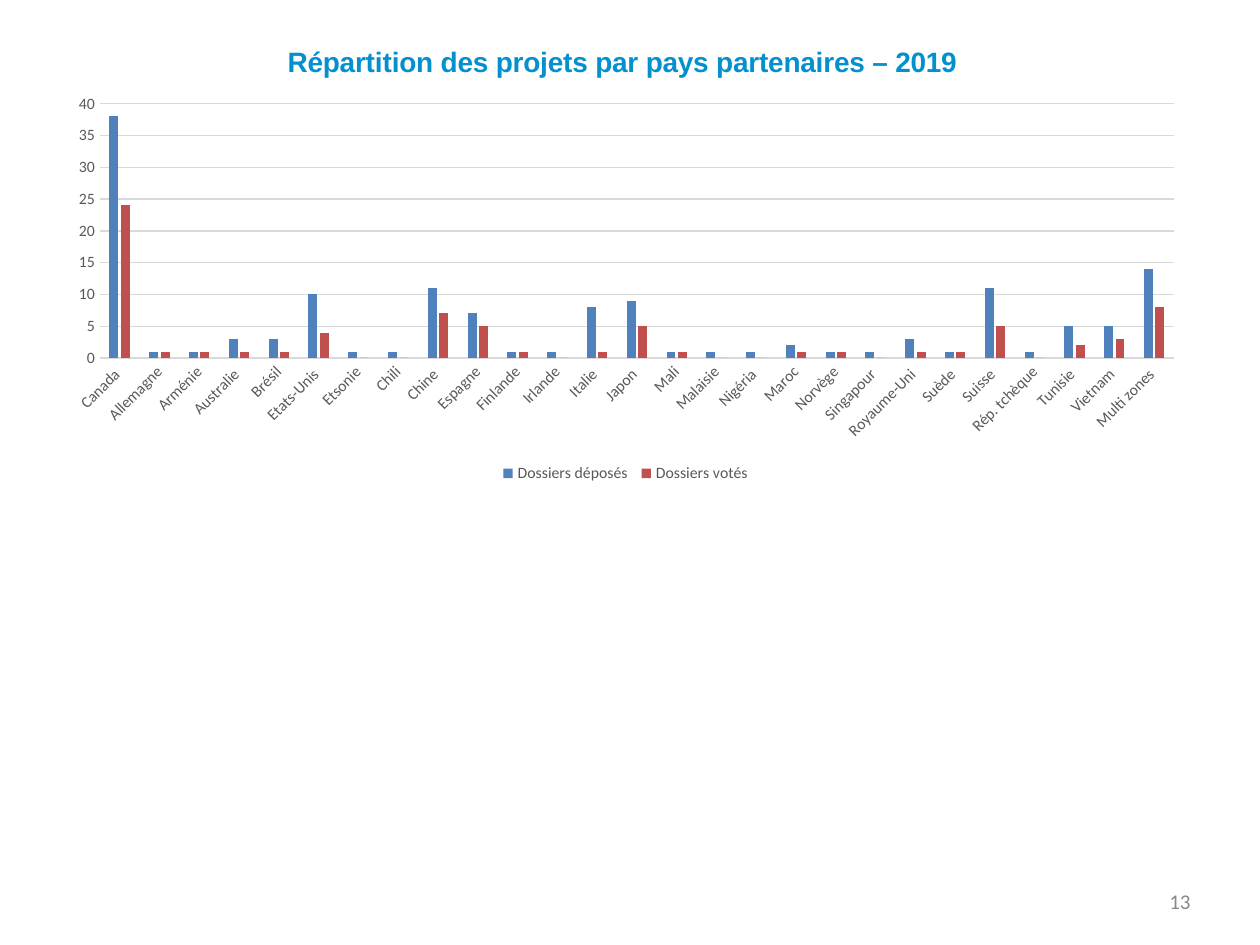
from lxml.etree import SubElement
from pptx import Presentation
from pptx.chart.data import CategoryChartData
from pptx.dml.color import RGBColor
from pptx.enum.chart import XL_CHART_TYPE, XL_LEGEND_POSITION, XL_TICK_MARK
from pptx.enum.text import MSO_ANCHOR, PP_ALIGN
from pptx.oxml import parse_xml
from pptx.oxml.ns import nsdecls, qn
from pptx.util import Cm, Pt

TITLE_BLUE = RGBColor(0x03, 0x90, 0xCE)
SUBMITTED_BLUE = RGBColor(0x4F, 0x81, 0xBD)
APPROVED_RED = RGBColor(0xC0, 0x50, 0x4D)
LABEL_GREY = RGBColor(0x59, 0x59, 0x59)
GRID_GREY = RGBColor(0xD9, 0xD9, 0xD9)
NUMBER_GREY = RGBColor(0x89, 0x89, 0x89)

# Country: (submitted, approved)
PROJECTS = {
    "Canada ": (38, 24), "Allemagne": (1, 1), "Arménie": (1, 1),
    "Australie ": (3, 1), "Brésil": (3, 1), "Etats-Unis ": (10, 4),
    "Etsonie": (1, 0), "Chili": (1, 0), "Chine ": (11, 7),
    "Espagne": (7, 5), "Finlande": (1, 1), "Irlande": (1, 0),
    "Italie ": (8, 1), "Japon ": (9, 5), "Mali": (1, 1),
    "Malaisie": (1, 0), "Nigéria ": (1, 0), "Maroc": (2, 1),
    "Norvège": (1, 1), "Singapour ": (1, 0), "Royaume-Uni ": (3, 1),
    "Suède ": (1, 1), "Suisse ": (11, 5), "Rép. tchèque": (1, 0),
    "Tunisie ": (5, 2), "Vietnam ": (5, 3), "Multi zones ": (14, 8),
}
SERIES = (("Dossiers déposés ", SUBMITTED_BLUE), ("Dossiers votés", APPROVED_RED))


class SlideBuilder:
    """Holds the shared style and the slide being filled."""

    body_font = "Calibri"
    title_font = "Arial"

    def __init__(self, slide):
        self.slide = slide

    def style(self, font, size, color, name=None, bold=False):
        font.name = name or self.body_font
        font.size = Pt(size)
        font.color.rgb = color
        font.bold = bold

    def place(self, element, before, **fractions):
        """Put a manual layout, in fractions of the chart, after `before`."""
        for old in element.findall(qn("c:layout")):
            element.remove(old)
        layout = parse_xml(f"<c:layout {nsdecls('c')}/>")
        manual = SubElement(layout, qn("c:manualLayout"))
        if "w" in fractions:
            SubElement(manual, qn("c:layoutTarget")).set("val", "inner")
        for mode in ("xMode", "yMode"):
            SubElement(manual, qn(f"c:{mode}")).set("val", "edge")
        for key, fraction in fractions.items():
            SubElement(manual, qn(f"c:{key}")).set("val", str(fraction))
        position = 0 if before is None else element.index(before) + 1
        element.insert(position, layout)

    def axis(self, axis):
        axis.major_tick_mark = axis.minor_tick_mark = XL_TICK_MARK.NONE
        self.style(axis.tick_labels.font, 9, LABEL_GREY)

    def grey_line(self, line):
        line.color.rgb = GRID_GREY
        line.width = Pt(0.75)

    def column_chart(self, title, left, top, width, height):
        data = CategoryChartData()
        data.categories = list(PROJECTS)
        for (name, _), values in zip(SERIES, zip(*PROJECTS.values())):
            data.add_series(name, values)
        chart = self.slide.shapes.add_chart(
            XL_CHART_TYPE.COLUMN_CLUSTERED, left, top, width, height, data).chart
        chart.font.name = self.body_font
        chart.font.size = Pt(10)

        # Title
        heading = chart.chart_title
        heading.text_frame.text = title
        self.style(heading.text_frame.paragraphs[0].runs[0].font, 16,
                   TITLE_BLUE, self.title_font, True)
        heading.include_in_layout = False
        title_xml = heading._element
        self.place(title_xml, title_xml.find(qn("c:tx")), x=0.2, y=0.03)

        # Columns
        plot = chart.plots[0]
        plot.gap_width, plot.overlap = 219, -27
        plot.vary_by_categories = False
        for series, (_, color) in zip(plot.series, SERIES):
            series.format.fill.solid()
            series.format.fill.fore_color.rgb = color
        plot_area = chart._chartSpace.chart.plotArea
        self.place(plot_area, None, x=0.04, y=0.17, w=0.94, h=0.55)

        # Axes
        countries, counts = chart.category_axis, chart.value_axis
        self.axis(countries)
        self.grey_line(countries.format.line)
        label_body = countries._element.find(qn("c:txPr")).find(qn("a:bodyPr"))
        label_body.set("rot", "-2700000")
        self.axis(counts)
        counts.format.line.fill.background()
        counts.minimum_scale, counts.maximum_scale, counts.major_unit = 0, 40, 5
        self.grey_line(counts.major_gridlines.format.line)

        # Legend
        chart.has_legend = True
        chart.legend.position = XL_LEGEND_POSITION.BOTTOM
        chart.legend.include_in_layout = False
        self.style(chart.legend.font, 9, LABEL_GREY)

    def page_number(self, number, left, top, width, height):
        frame = self.slide.shapes.add_textbox(left, top, width, height).text_frame
        frame.word_wrap = True
        frame.vertical_anchor = MSO_ANCHOR.MIDDLE
        frame.margin_left = frame.margin_right = Cm(0.13)
        frame.margin_top = frame.margin_bottom = Cm(0.13)
        frame.text = number
        paragraph = frame.paragraphs[0]
        paragraph.alignment = PP_ALIGN.RIGHT
        self.style(paragraph.runs[0].font, 12, NUMBER_GREY)


def main():
    presentation = Presentation()
    presentation.slide_width, presentation.slide_height = Cm(25.4), Cm(19.05)
    builder = SlideBuilder(
        presentation.slides.add_slide(presentation.slide_layouts[6]))
    builder.page_number("13", Cm(18.21), Cm(17.79), Cm(5.92), Cm(0.74))
    builder.column_chart("Répartition des projets par pays partenaires – 2019",
                         Cm(1.09), Cm(0.51), Cm(23.04), Cm(9.32))
    presentation.save("out.pptx")


if __name__ == "__main__":
    main()
